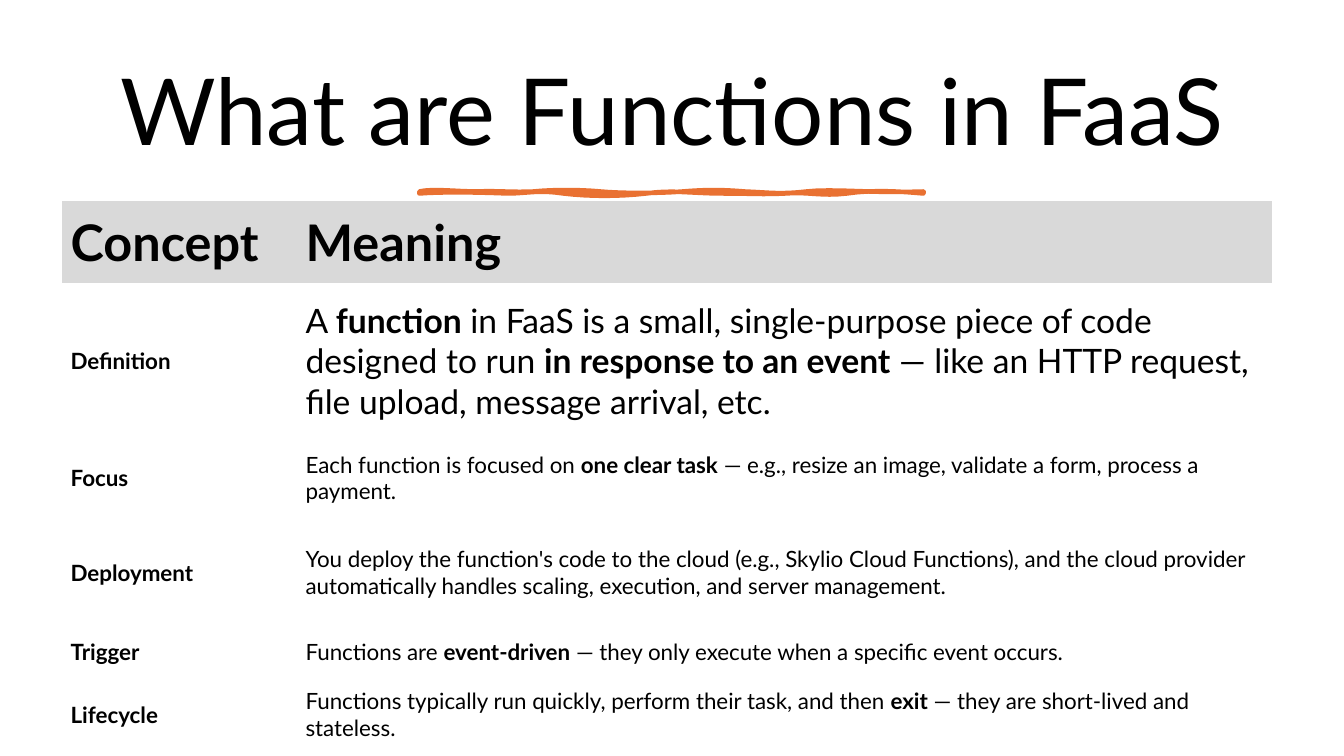
import dataclasses
import pptx
import pptx.dml.color
import pptx.enum.text
import pptx.oxml.ns
import pptx.util

Pt = pptx.util.Pt
RGB = pptx.dml.color.RGBColor.from_string
MID = pptx.enum.text.MSO_ANCHOR.MIDDLE


@dataclasses.dataclass(frozen=True)
class Theme:
    face: str = "Lato"
    ink: str = "000000"
    band: str = "D9D9D9"
    accent: str = "E97132"
    title: int = 66
    head: int = 36
    lead: int = 24
    body: int = 16
    plain: str = "{2D5ABB26-0587-4C30-8999-92F81FD0307C}"


class Deck:
    def __init__(self, theme):
        self.theme = theme
        self.file = pptx.Presentation()
        self.file.slide_width, self.file.slide_height = Pt(960), Pt(540)
        self.slide = self.file.slides.add_slide(self.file.slide_layouts[5])

    def style(self, par, size, bold=None):
        font = par.font
        font.name, font.size, font.bold = self.theme.face, Pt(size), bold
        font.color.rgb = RGB(self.theme.ink)

    def title(self, text, left, top, width, height):
        shape = self.slide.shapes.title
        shape.left, shape.top = Pt(left), Pt(top)
        shape.width, shape.height = Pt(width), Pt(height)
        frame = shape.text_frame
        frame.text, frame.vertical_anchor, frame.word_wrap = text, MID, True
        frame.auto_size = pptx.enum.text.MSO_AUTO_SIZE.NONE
        par = frame.paragraphs[0]
        par.alignment = pptx.enum.text.PP_ALIGN.CENTER
        par.line_spacing = 0.9
        self.style(par, self.theme.title)

    def stroke(self, start, curves, weight, steps=8):
        dots, last = [], start
        for curve in curves:
            ends = [last, *zip(curve[::2], curve[1::2])]
            for step in range(1, steps + 1):
                t = step / steps
                mix = ((1 - t) ** 3, 3 * t * (1 - t) ** 2, 3 * t * t * (1 - t), t ** 3)
                dots.append(tuple(Pt(sum(m * p[k] for m, p in zip(mix, ends))) for k in (0, 1)))
            last = ends[-1]
        pen = self.slide.shapes.build_freeform(Pt(start[0]), Pt(start[1]))
        pen.add_line_segments(dots, close=True)
        shape = pen.convert_to_shape()
        shape.shadow.inherit = False
        shape.fill.solid()
        shape.fill.fore_color.rgb = RGB(self.theme.accent)
        shape.line.color.rgb = RGB(self.theme.accent)
        shape.line.width = Pt(weight)

    def cell(self, cell, text, size, bold, fill):
        cell.vertical_anchor = MID
        cell.margin_left = cell.margin_right = Pt(6.5)
        cell.margin_top = cell.margin_bottom = Pt(3)
        if fill:
            cell.fill.solid()
            cell.fill.fore_color.rgb = RGB(fill)
        else:
            cell.fill.background()
        par = cell.text_frame.paragraphs[0]
        self.style(par, size, bold)
        for spot, part in enumerate(text.split("*")):
            run = par.add_run()
            run.text = part
            if spot % 2:
                run.font.bold = True

    def table(self, rows, left, top, widths, heights):
        frame = self.slide.shapes.add_table(
            len(rows), len(widths), Pt(left), Pt(top), Pt(sum(widths)), Pt(sum(heights)))
        for mark in frame.element.iter(pptx.oxml.ns.qn("a:tableStyleId")):
            mark.text = self.theme.plain
        grid = frame.table
        grid.first_row = grid.horz_banding = False
        for col, width in zip(grid.columns, widths):
            col.width = Pt(width)
        for row, height in zip(grid.rows, heights):
            row.height = Pt(height)
        for i, texts in enumerate(rows):
            for j, text in enumerate(texts):
                size = self.theme.body
                if i == 0:
                    size = self.theme.head
                elif (i, j) == (1, 1):
                    size = self.theme.lead
                fill = self.theme.band if i == 0 else None
                self.cell(grid.cell(i, j), text, size, i == 0 or j == 0, fill)


START = (299.5, 136.8)
WAVE = [
    (308.2, 134.6, 326.9, 136.8, 340.6, 136.8),
    (354.2, 136.1, 366.5, 137.5, 380.9, 136.8),
    (395.3, 135.4, 413.3, 135.4, 429.1, 136.8),
    (444.2, 138.2, 470.2, 138.2, 487.4, 136.8),
    (505.4, 135.4, 514.1, 135.4, 532.1, 136.8),
    (549.4, 137.5, 557.3, 139, 576, 136.8),
    (594.7, 134.6, 624.2, 138.2, 659.5, 136.8),
    (660.2, 137.5, 659.5, 137.5, 659.5, 138.2),
    (644.4, 136.8, 622.8, 135.4, 604.8, 138.2),
    (586.8, 140.4, 576.7, 136.8, 560.9, 138.2),
    (544.3, 139, 537.8, 138.2, 516.2, 138.2),
    (494.6, 138.2, 480.2, 135.4, 461.5, 138.2),
    (442.1, 140.4, 421.2, 140.4, 402.5, 138.2),
    (384.5, 135.4, 376.6, 138.2, 362.2, 138.2),
    (347.8, 137.5, 315.4, 136.8, 299.5, 138.2),
]
ROWS = [
    ("Concept", "Meaning"),
    ("Definition", "A *function* in FaaS is a small, single-purpose piece of code designed to run "
     "*in response to an event* — like an HTTP request, file upload, message arrival, etc."),
    ("Focus", "Each function is focused on *one clear task* — e.g., resize an image, "
     "validate a form, process a payment."),
    ("Deployment", "You deploy the function's code to the cloud (e.g., Skylio Cloud Functions), "
     "and the cloud provider automatically handles scaling, execution, and server management."),
    ("Trigger", "Functions are *event-driven* — they only execute when a specific event occurs."),
    ("Lifecycle", "Functions typically run quickly, perform their task, and then *exit* — "
     "they are short-lived and stateless."),
]


def main():
    deck = Deck(Theme())
    deck.title("What are Functions in FaaS", 50.5, 33, 859, 98.5)
    deck.stroke(START, WAVE, 3.25)
    deck.table(ROWS, 44, 143.3, (167.8, 697), (59, 110.9, 56.2, 79.2, 33.8, 56.2))
    deck.file.save("out.pptx")


if __name__ == "__main__":
    main()
